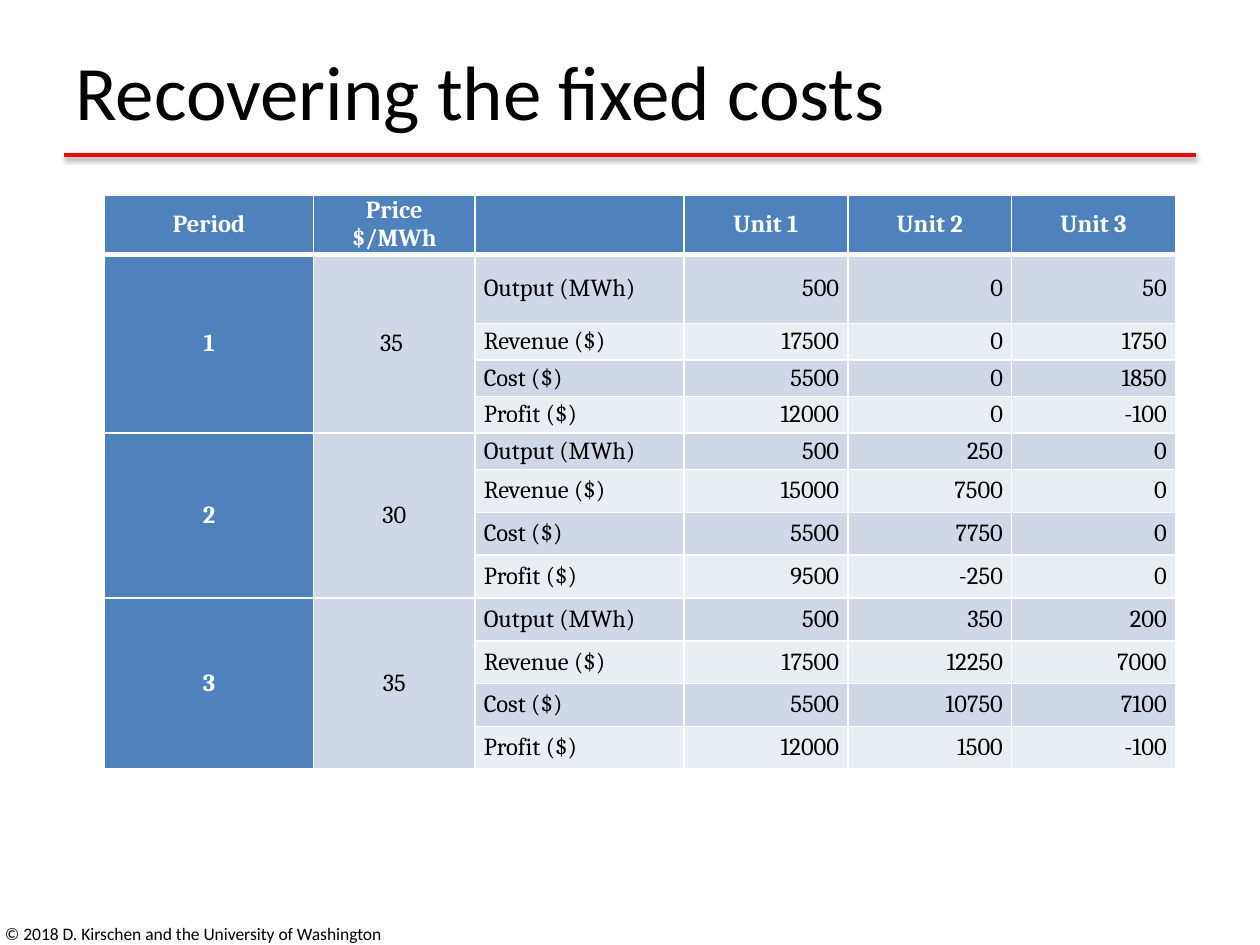
from dataclasses import dataclass

from lxml.etree import SubElement
from pptx import Presentation
from pptx.dml.color import RGBColor
from pptx.enum.shapes import MSO_CONNECTOR
from pptx.enum.text import MSO_ANCHOR, PP_ALIGN
from pptx.oxml.ns import qn
from pptx.util import Inches, Pt


@dataclass(frozen=True)
class Theme:
    black: str = "000000"
    white: str = "FFFFFF"
    red: str = "FF0000"
    head: str = "4F81BD"
    dark: str = "D0D8E8"
    light: str = "E9EDF4"
    sans: str = "Calibri"
    serif: str = "Cambria"
    title: int = 44
    body: int = 14
    foot: int = 10


THEME = Theme()
LEFT, MID, RIGHT = PP_ALIGN.LEFT, PP_ALIGN.CENTER, PP_ALIGN.RIGHT
HEADS = ["Period", "Price $/MWh", "", "Unit 1", "Unit 2", "Unit 3"]
ITEMS = ["Output (MWh)", "Revenue ($)", "Cost ($)", "Profit ($)"]
WIDTHS = [1.66, 1.28, 1.66, 1.3, 1.3, 1.3]
HEIGHTS = [0.29, 0.55] + [0.29] * 4 + [0.34] * 7

# Period, price, then the three units for each item
PERIODS = [
    ("1", "35 ", [(500, 0, 50), (17500, 0, 1750),
                  (5500, 0, 1850), (12000, 0, -100)]),
    ("2", "30", [(500, 250, 0), (15000, 7500, 0),
                 (5500, 7750, 0), (9500, -250, 0)]),
    ("3", "35", [(500, 350, 200), (17500, 12250, 7000),
                 (5500, 10750, 7100), (12000, 1500, -100)]),
]


def style(item, values):
    for name, value in values.items():
        setattr(item, name, value)


def write(para, text, face, size, color, bold=False):
    run = para.add_run()
    run.text = text
    style(run.font, {"name": face, "size": Pt(size), "bold": bold})
    run.font.color.rgb = RGBColor.from_string(color)


def add_text(slide, text, size, *box):
    frame = slide.shapes.add_textbox(*map(Inches, box)).text_frame
    style(frame, {"word_wrap": True, "vertical_anchor": MSO_ANCHOR.MIDDLE})
    write(frame.paragraphs[0], text, THEME.sans, size, THEME.black)


def add_rule(slide, left, right, top):
    ends = map(Inches, (left, top, right, top))
    rule = slide.shapes.add_connector(MSO_CONNECTOR.STRAIGHT, *ends)
    rule.line.color.rgb = RGBColor.from_string(THEME.red)
    rule.line.width = Pt(2)
    # Soft shadow straight below the rule
    effects = SubElement(rule._element.spPr, qn("a:effectLst"))
    shadow = SubElement(effects, qn("a:outerShdw"), blurRad=str(Pt(3.1)),
                        dist=str(Pt(1.6)), dir="5400000", rotWithShape="0")
    color = SubElement(shadow, qn("a:srgbClr"), val=THEME.black)
    SubElement(color, qn("a:alpha"), val="38000")


def add_edges(cell, top=1, bottom=1):
    props = cell._tc.get_or_add_tcPr()
    for side, width in zip("LRTB", (1, 1, top, bottom)):
        line = SubElement(props, qn(f"a:ln{side}"), w=str(Pt(width)))
        fill = SubElement(line, qn("a:solidFill"))
        SubElement(fill, qn("a:srgbClr"), val=THEME.white)


def fill_cell(cell, text, align, fill, head=False):
    style(cell, {"margin_left": Inches(0.07), "margin_right": Inches(0.07),
                 "margin_top": 0, "margin_bottom": 0,
                 "vertical_anchor": MSO_ANCHOR.MIDDLE})
    cell.fill.solid()
    cell.fill.fore_color.rgb = RGBColor.from_string(fill)
    para = cell.text_frame.paragraphs[0]
    style(para, {"alignment": align, "space_after": Pt(6)})
    if text:
        color = THEME.white if head else THEME.black
        write(para, text, THEME.serif, THEME.body, color, head)


def add_costs(slide):
    frame = slide.shapes.add_table(
        len(HEIGHTS), len(WIDTHS), Inches(0.83), Inches(1.55),
        Inches(sum(WIDTHS)), Inches(sum(HEIGHTS)))
    table = frame.table
    style(table, {"first_row": False, "horz_banding": False})
    for col, width in zip(table.columns, WIDTHS):
        col.width = Inches(width)
    for row, height in zip(table.rows, HEIGHTS):
        row.height = Inches(height)

    # White grid, thicker below the header
    for index, row in enumerate(table.rows):
        for cell in row.cells:
            add_edges(cell, 3 if index == 1 else 1, 3 if index == 0 else 1)

    # Header
    for col, text in enumerate(HEADS):
        fill_cell(table.cell(0, col), text, MID, THEME.head, True)

    # One block of four rows per period
    size = len(ITEMS)
    for block, (period, price, values) in enumerate(PERIODS):
        first = 1 + block * size
        for col in (0, 1):
            table.cell(first, col).merge(table.cell(first + size - 1, col))
        fill_cell(table.cell(first, 0), period, MID, THEME.head, True)
        fill_cell(table.cell(first, 1), price, MID, THEME.dark)
        for step, (item, units) in enumerate(zip(ITEMS, values)):
            fill = THEME.light if step % 2 else THEME.dark
            fill_cell(table.cell(first + step, 2), item, LEFT, fill)
            for col, value in enumerate(units, 3):
                fill_cell(table.cell(first + step, col), str(value),
                          RIGHT, fill)


def main():
    deck = Presentation()
    style(deck, {"slide_width": Inches(10), "slide_height": Inches(7.5)})
    slide = deck.slides.add_slide(deck.slide_layouts[6])
    add_rule(slide, 0.51, 9.49, 1.23)
    add_text(slide, "Recovering the fixed costs", THEME.title,
             0.5, 0.13, 9, 1.17)
    add_text(slide, "© 2018 D. Kirschen and the University of Washington",
             THEME.foot, -0.06, 7.21, 3.88, 0.4)
    add_costs(slide)
    deck.save("out.pptx")


if __name__ == "__main__":
    main()
